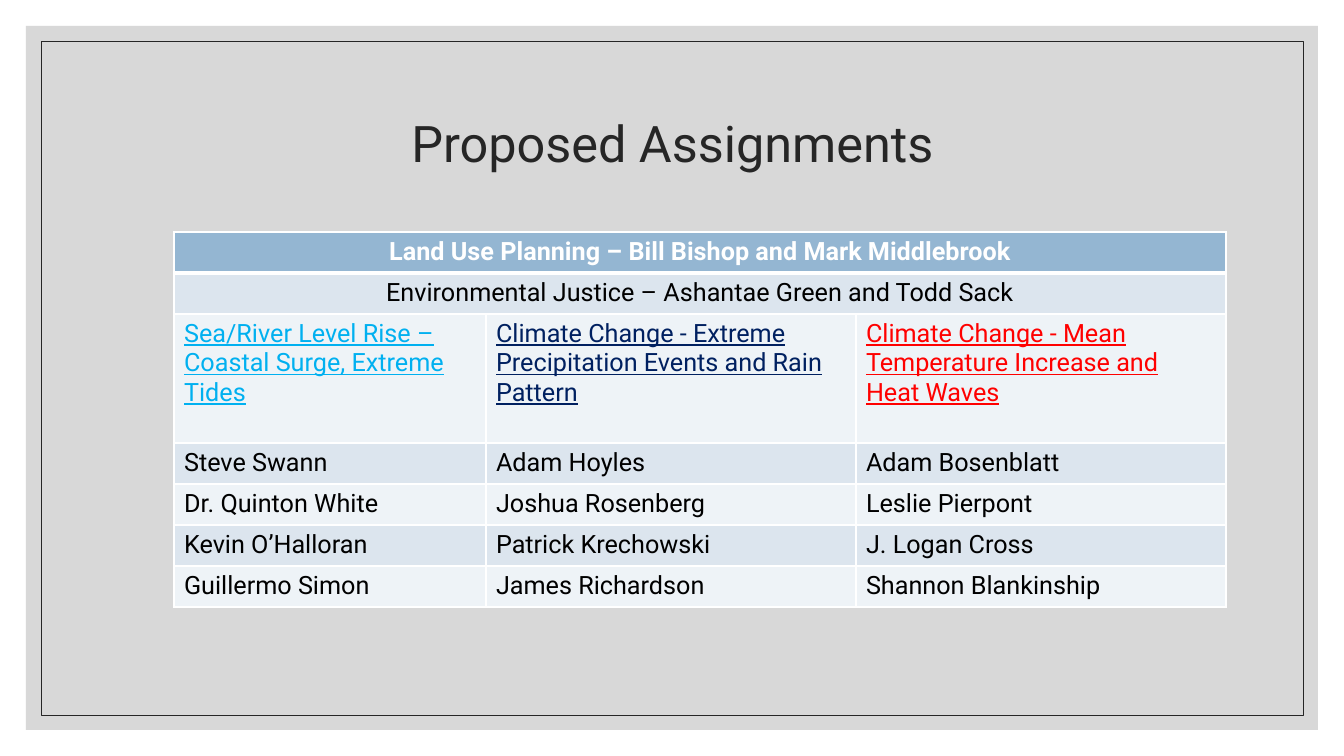
from pptx import Presentation
from pptx.dml.color import RGBColor as RGB
from pptx.enum.shapes import MSO_SHAPE as SHAPE
from pptx.enum.text import MSO_ANCHOR as ANCHOR, PP_ALIGN as ALIGN
from pptx.oxml import parse_xml
from pptx.oxml.ns import nsdecls, qn
from pptx.util import Pt

SCALE = 914400 / 100.8
FONT = "Roboto"
WHITE = RGB(0xFF, 0xFF, 0xFF)
BLACK = RGB(0x00, 0x00, 0x00)
INK = RGB(0x26, 0x26, 0x26)
GRAY = RGB(0xBF, 0xBF, 0xBF)
BLUE = RGB(0x94, 0xB6, 0xD2)
BAND = RGB(0xDC, 0xE5, 0xEE)
PALE = RGB(0xEE, 0xF3, 0xF7)
SKY = RGB(0x00, 0xB0, 0xF0)
NAVY = RGB(0x00, 0x20, 0x60)
RED = RGB(0xFF, 0x00, 0x00)

HEAD = "Land Use Planning – Bill Bishop and Mark Middlebrook"
JUSTICE = "Environmental Justice – Ashantae Green and Todd Sack"
TOPICS = [
    ("Sea/River Level Rise – Coastal Surge, Extreme Tides", SKY),
    ("Climate Change - Extreme Precipitation Events and Rain Pattern", NAVY),
    ("Climate Change - Mean Temperature Increase and Heat Waves", RED),
]
PEOPLE = [
    ("Steve Swann", "Adam Hoyles", "Adam Bosenblatt"),
    ("Dr. Quinton White", "Joshua Rosenberg", "Leslie Pierpont"),
    ("Kevin O’Halloran", "Patrick Krechowski", "J. Logan Cross"),
    ("Guillermo Simon", "James Richardson", "Shannon Blankinship"),
]
COLS = (312, 370, 370)
ROW, TALL = 41, 129


def px(n):
    return round(n * SCALE)


def write(frame, text, size=18, color=BLACK, bold=False, under=False,
          align=ALIGN.LEFT, space=None):
    para = frame.paragraphs[0]
    para.alignment = align
    para.line_spacing = space
    run = para.add_run()
    run.text = text
    font = run.font
    font.name, font.size = FONT, Pt(size)
    font.bold, font.underline = bold, under
    font.color.rgb = color


def add_rect(slide, box):
    rect = slide.shapes.add_shape(SHAPE.RECTANGLE, *map(px, box))
    rect.shadow.inherit = False
    return rect


def add_frame(slide, box, gap):
    # Translucent panel
    x, y, w, h = box
    panel = add_rect(slide, box)
    panel.fill.solid()
    panel.fill.fore_color.rgb = GRAY
    tint = panel.fill._xPr.find(qn("a:solidFill"))[0]
    tint.append(parse_xml(f'<a:alpha {nsdecls("a")} val="60000"/>'))
    panel.line.fill.background()

    # Thin inner border
    edge = add_rect(slide, (x + gap, y + gap, w - 2 * gap, h - 2 * gap))
    edge.fill.background()
    edge.line.color.rgb = INK
    edge.line.width = Pt(0.5)


def add_title(slide, box):
    frame = slide.shapes.add_textbox(*map(px, box)).text_frame
    frame.word_wrap = True
    frame.vertical_anchor = ANCHOR.MIDDLE
    write(frame, "Proposed Assignments", size=36, color=INK,
          align=ALIGN.CENTER, space=0.9)


def style_cell(cell, fill, top=1, base=1):
    props = cell._tc.get_or_add_tcPr()
    for side, width in zip("LRTB", (1, 1, top, base)):
        props.append(parse_xml(
            f'<a:ln{side} {nsdecls("a")} w="{Pt(width)}"><a:solidFill>'
            f'<a:srgbClr val="{WHITE}"/></a:solidFill></a:ln{side}>'))
    cell.fill.solid()
    cell.fill.fore_color.rgb = fill


def add_grid(slide, box):
    rows = [ROW, ROW, TALL] + [ROW] * len(PEOPLE)
    grid = slide.shapes.add_table(len(rows), len(COLS), *map(px, box)).table
    for col, width in zip(grid.columns, COLS):
        col.width = px(width)

    # Bands and borders
    for r, height in enumerate(rows):
        grid.rows[r].height = px(height)
        fill = BLUE if r == 0 else BAND if r % 2 else PALE
        for c in range(len(COLS)):
            style_cell(grid.cell(r, c), fill, top=3 if r == 1 else 1,
                       base=3 if r == 0 else 1)

    # Full-width rows
    for r, (text, color) in enumerate([(HEAD, WHITE), (JUSTICE, BLACK)]):
        cell = grid.cell(r, 0)
        cell.merge(grid.cell(r, len(COLS) - 1))
        write(cell.text_frame, text, color=color, bold=r == 0,
              align=ALIGN.CENTER)

    # Topics with their people
    for c, (text, color) in enumerate(TOPICS):
        write(grid.cell(2, c).text_frame, text, color=color, under=True)
    for r, names in enumerate(PEOPLE, 3):
        for c, name in enumerate(names):
            write(grid.cell(r, c).text_frame, name)


def main():
    deck = Presentation()
    deck.slide_width, deck.slide_height = px(1344), px(756)
    slide = deck.slides.add_slide(deck.slide_layouts[6])
    add_frame(slide, (26, 26, 1292, 704), gap=15)
    add_title(slide, (118, 71, 1109, 151))
    add_grid(slide, (174, 232, sum(COLS), 374))
    deck.save("out.pptx")


if __name__ == "__main__":
    main()
